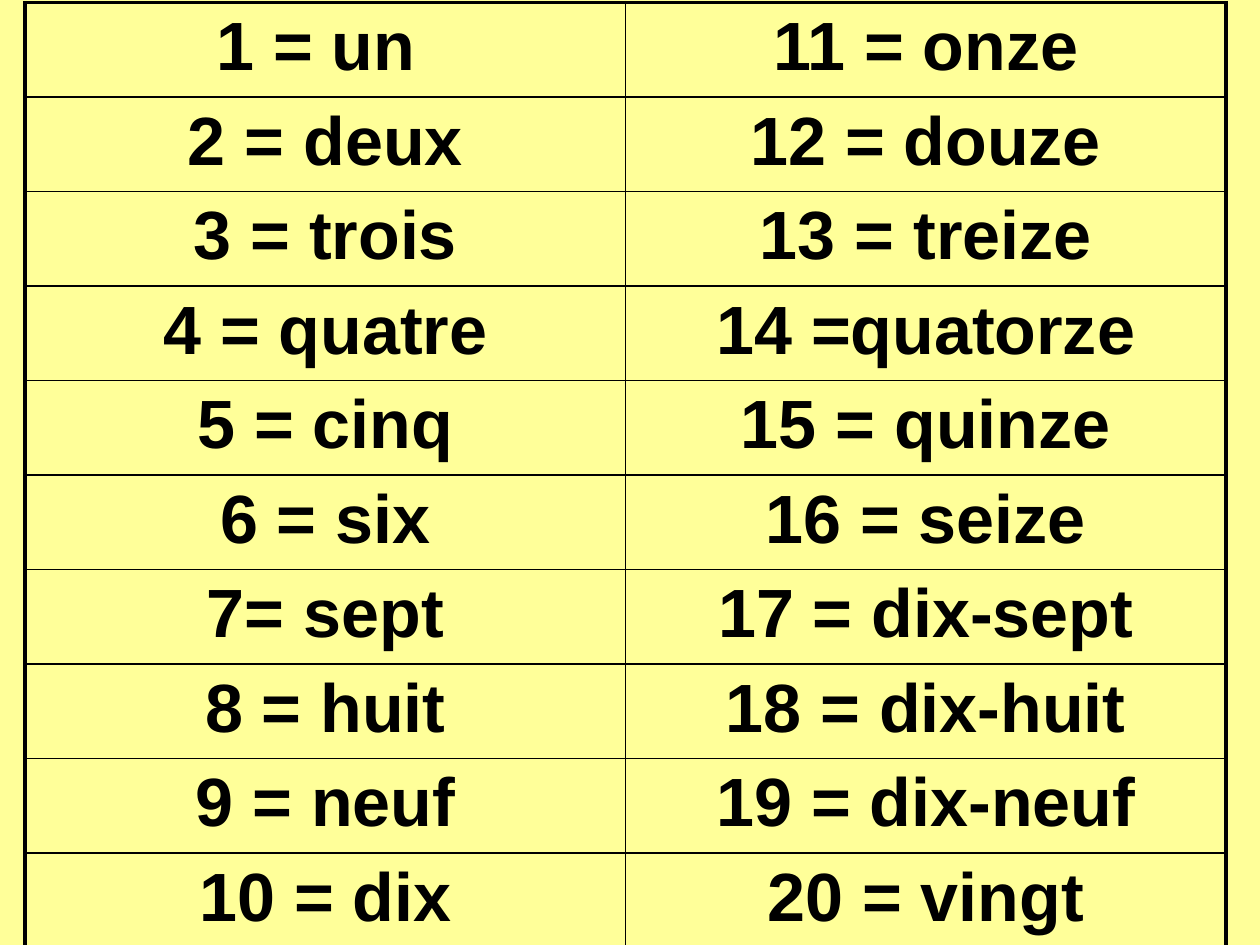
from dataclasses import dataclass

from lxml import etree
from pptx import Presentation
from pptx import util as u
from pptx.dml import color
from pptx.enum import text
from pptx.oxml import ns


@dataclass(frozen=True)
class Theme:
    """Colours, type and line weights of the slide."""

    background: color.RGBColor = color.RGBColor(0xFF, 0xFF, 0x99)
    ink: color.RGBColor = color.RGBColor(0, 0, 0)
    font: str = "Arial"
    size: float = 39
    space_before: float = 9
    outer_line: float = 2.25
    inner_line: float = 1


THEME = Theme()
NUMBERS = [
    ("1 = un ", "11 = onze"),
    ("2 = deux", "12 = douze"),
    ("3 = trois", "13 = treize"),
    ("4 = quatre", "14 =quatorze"),
    ("5 = cinq", "15 = quinze"),
    ("6 = six", "16 = seize"),
    ("7= sept", "17 = dix-sept"),
    ("8 = huit", "18 = dix-huit"),
    ("9 = neuf", "19 = dix-neuf"),
    ("10 = dix", "20 = vingt"),
]


def write_text(frame, words, size=THEME.size, bold=True, align=text.PP_ALIGN.CENTER):
    """Write one formatted paragraph into a text frame."""
    paragraph = frame.paragraphs[0]
    paragraph.alignment = align
    paragraph.space_before = u.Pt(THEME.space_before)
    run = paragraph.add_run()
    run.text = words
    run.font.name = THEME.font
    run.font.size = u.Pt(size)
    run.font.bold = bold
    run.font.color.rgb = THEME.ink


def set_borders(cell, outer_sides):
    """Draw the four cell borders, heavier on the outer sides of the table."""
    properties = cell._tc.get_or_add_tcPr()
    for position, side in enumerate("LRTB"):
        weight = THEME.outer_line if side in outer_sides else THEME.inner_line
        line = etree.Element(ns.qn(f"a:ln{side}"), w=str(u.Pt(weight)))
        fill = etree.SubElement(line, ns.qn("a:solidFill"))
        etree.SubElement(fill, ns.qn("a:srgbClr"), val=str(THEME.ink))
        properties.insert(position, line)


def add_number_table(slide, rows, left, top, width, height):
    """Fill the given box with a table of numbers and their French names."""
    row_count, column_count = len(rows), len(rows[0])
    table = slide.shapes.add_table(row_count, column_count, left, top, width, height).table
    table.first_row = False
    table.horz_banding = False
    for row_index, row in enumerate(rows):
        for column_index, words in enumerate(row):
            cell = table.cell(row_index, column_index)
            cell.fill.background()
            cell.margin_left = cell.margin_right = u.Inches(0.05)
            cell.margin_top = cell.margin_bottom = u.Inches(0.05)
            edges = {
                "L": column_index == 0,
                "R": column_index == column_count - 1,
                "T": row_index == 0,
                "B": row_index == row_count - 1,
            }
            set_borders(cell, [side for side, outer in edges.items() if outer])
            write_text(cell.text_frame, words)


def main():
    """Build and save the slide."""
    presentation = Presentation()
    presentation.slide_width = u.Inches(10)
    presentation.slide_height = u.Inches(7.5)
    slide = presentation.slides.add_slide(presentation.slide_layouts[6])
    slide.background.fill.solid()
    slide.background.fill.fore_color.rgb = THEME.background
    add_number_table(
        slide, NUMBERS, u.Inches(0.2), u.Inches(0.02), u.Inches(9.53), u.Inches(7.5)
    )
    presentation.save("out.pptx")


if __name__ == "__main__":
    main()
